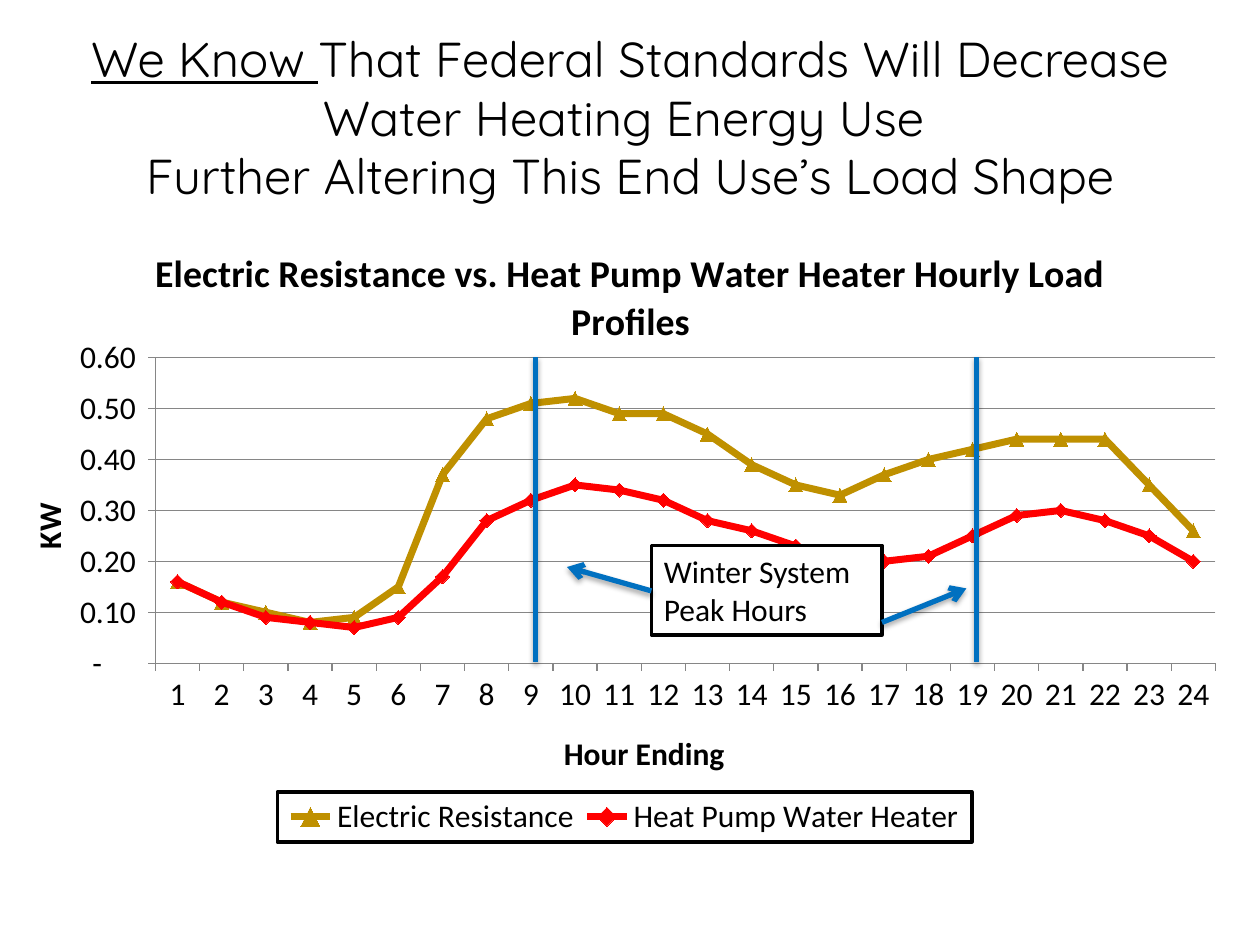
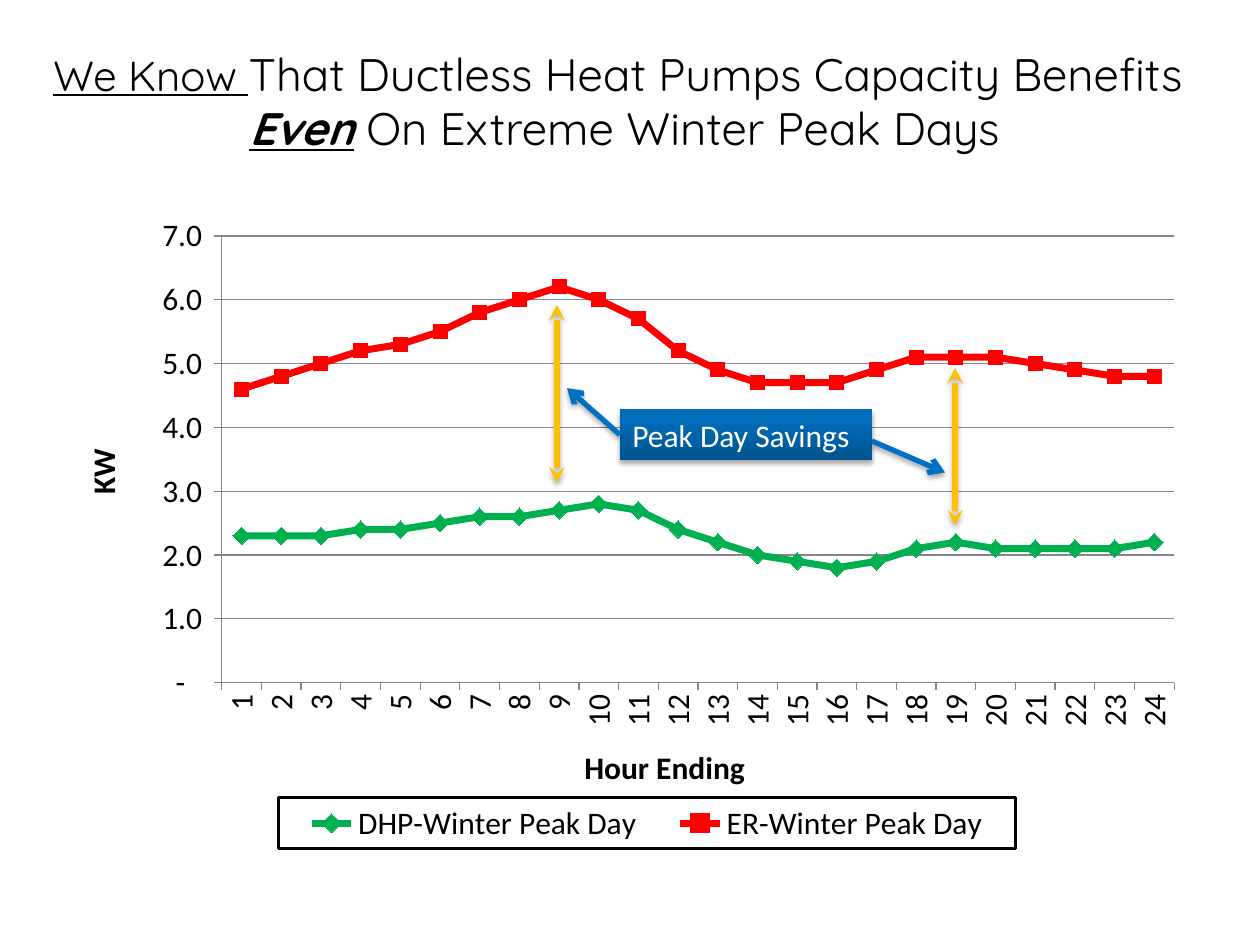
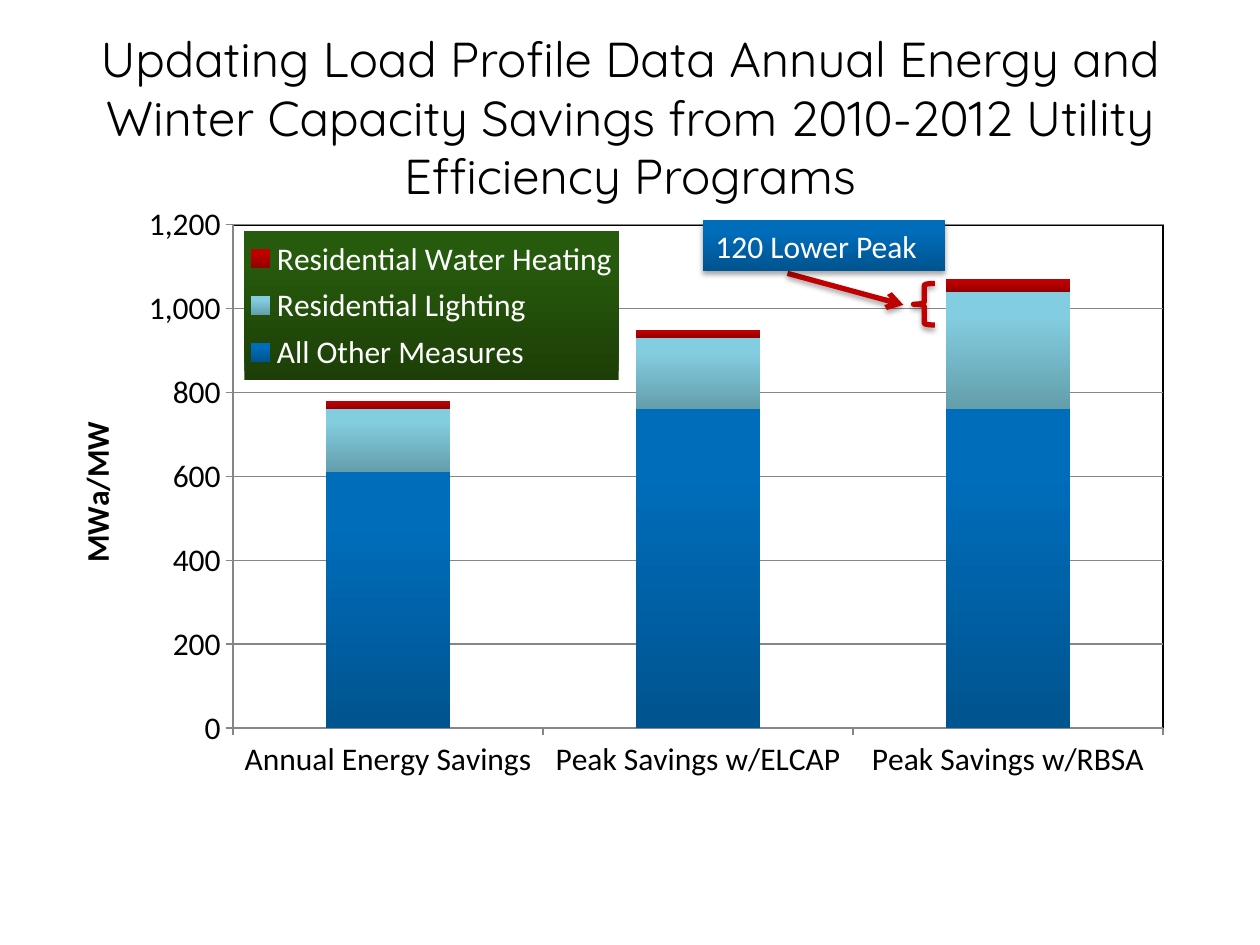
from pptx import Presentation
from pptx.chart.data import CategoryChartData
from pptx.dml.color import RGBColor
from pptx.enum.chart import XL_CHART_TYPE as ChartType
from pptx.enum.chart import XL_LEGEND_POSITION as LegendPosition
from pptx.enum.chart import XL_MARKER_STYLE as Marker
from pptx.enum.chart import XL_TICK_MARK as TickMark
from pptx.enum.shapes import MSO_CONNECTOR as Connector
from pptx.enum.shapes import MSO_SHAPE as Shape
from pptx.enum.text import MSO_ANCHOR as Anchor
from pptx.enum.text import MSO_AUTO_SIZE as AutoSize
from pptx.enum.text import PP_ALIGN as Align
from pptx.oxml import parse_xml
from pptx.oxml.ns import nsdecls, qn
from pptx.util import Inches, Pt

COLORS = {
    "black": "000000", "white": "FFFFFF", "grid": "868686",
    "blue": "0070C0", "gold": "BF9000", "yellow": "FFC000",
    "red": "FF0000", "dark_red": "C00000", "green": "00B050",
}
# Gradients run from the dark bottom to the bright top
GRADIENTS = {
    "blue": ("00548F", "006DBB"),
    "teal": ("639EAB", "83CDE0"),
    "red": ("900000", "BF0000"),
    "forest": ("1D3F07", "265A0C"),
}
TITLE_FONT, BODY_FONT, BODY_SIZE = "Quicksand", "Calibri", 18
HOURS = [str(hour) for hour in range(1, 25)]
TITLE_BOX = (0.5, 0.3, 9, 1.25)


def rgb(name):
    return RGBColor.from_string(COLORS[name])


def set_font(font, name, size, color):
    font.name, font.size, font.color.rgb = name, Pt(size), rgb(color)


def set_line(line, color, width):
    line.color.rgb = rgb(color)
    line.width = Pt(width)


def set_gradient(fill, name):
    fill.gradient()
    fill.gradient_angle = 90
    for stop, color, position in zip(fill.gradient_stops, GRADIENTS[name], (0, 0.8)):
        stop.color.rgb = RGBColor.from_string(color)
        stop.position = position


def add_shadow(shape):
    properties = shape._element.spPr
    for effects in properties.findall(qn("a:effectLst")):
        properties.remove(effects)
    properties.append(parse_xml(
        f'<a:effectLst {nsdecls("a")}><a:outerShdw blurRad="{Pt(3.1)}" '
        f'dist="{Pt(1.8)}" dir="5400000" rotWithShape="0">'
        f'<a:srgbClr val="{COLORS["black"]}"><a:alpha val="35000"/></a:srgbClr>'
        '</a:outerShdw></a:effectLst>'))


def place(box, offset):
    """Turn an offset inside a box into slide lengths."""
    return Inches(box[0] + offset[0]), Inches(box[1] + offset[1])


def add_title(slide, box, lines, size=28):
    """Each line is a list of (text, font attributes) pieces."""
    title = slide.shapes.title
    title.left, title.top, title.width, title.height = map(Inches, box)
    frame = title.text_frame
    frame.auto_size, frame.vertical_anchor = AutoSize.NONE, Anchor.MIDDLE
    paragraph = frame.paragraphs[0]
    paragraph.alignment = Align.CENTER
    set_font(paragraph.font, TITLE_FONT, size, "black")
    for number, pieces in enumerate(lines):
        if number:
            paragraph.add_line_break()
        for text, attributes in pieces:
            run = paragraph.add_run()
            run.text = text
            for attribute, value in attributes.items():
                setattr(run.font, attribute, value)


def add_rule(slide, box, start, end, color, head=None, tail=None):
    """Draw a shadowed line between two offsets in the box."""
    rule = slide.shapes.add_connector(
        Connector.STRAIGHT, *place(box, start), *place(box, end))
    set_line(rule.line, color, 3)
    outline = rule.line._get_or_add_ln()
    for tag, kind in (("headEnd", head), ("tailEnd", tail)):
        if kind:
            outline.append(parse_xml(f'<a:{tag} {nsdecls("a")} type="{kind}"/>'))
    add_shadow(rule)


def add_shape(slide, kind, box, offset, size):
    shape = slide.shapes.add_shape(kind, *place(box, offset), *map(Inches, size))
    shape.shadow.inherit = False
    return shape


def add_callout(slide, box, offset, size, text, filled=True):
    """Add a label, either blue or white with a black frame."""
    callout = add_shape(slide, Shape.RECTANGLE, box, offset, size)
    if filled:
        set_gradient(callout.fill, "blue")
        callout.line.fill.background()
        add_shadow(callout)
    else:
        callout.fill.solid()
        callout.fill.fore_color.rgb = rgb("white")
        set_line(callout.line, "black", 2)
    frame = callout.text_frame
    frame.word_wrap, frame.auto_size = True, AutoSize.SHAPE_TO_FIT_TEXT
    frame.vertical_anchor = Anchor.TOP
    paragraph = frame.paragraphs[0]
    paragraph.text, paragraph.alignment = text, Align.LEFT
    set_font(paragraph.font, BODY_FONT, BODY_SIZE, "white" if filled else "black")


def manual_layout(layout, inner=False):
    """Fractions of the chart: left, top, width, height."""
    target = '<c:layoutTarget val="inner"/>' if inner else ""
    modes = '<c:xMode val="edge"/><c:yMode val="edge"/>'
    sizes = "".join(f'<c:{tag} val="{value}"/>' for tag, value in zip("xywh", layout))
    return parse_xml(f'<c:layout {nsdecls("c")}><c:manualLayout>'
                     f'{target}{modes}{sizes}</c:manualLayout></c:layout>')


def set_heading(owner, text, size=BODY_SIZE):
    """Title a chart or an axis in bold."""
    title = owner.chart_title if hasattr(owner, "chart_title") else owner.axis_title
    paragraph = title.text_frame.paragraphs[0]
    paragraph.text = text
    set_font(paragraph.font, BODY_FONT, size, "black")
    paragraph.font.bold = True


def add_chart(slide, box, kind, categories, series, plot, maximum, step,
              number_format, value_title):
    """Add a chart with the shared axes, grid and fonts."""
    data = CategoryChartData()
    data.categories = categories
    for name, values in series:
        data.add_series(name, values)
    chart = slide.shapes.add_chart(kind, *map(Inches, box), data).chart
    set_font(chart.font, BODY_FONT, BODY_SIZE, "black")
    chart.has_title = False
    chart.plots[0].vary_by_categories = False
    plot_area = chart._chartSpace.chart.plotArea
    for layout in plot_area.findall(qn("c:layout")):
        plot_area.remove(layout)
    plot_area.insert(0, manual_layout(plot, inner=True))

    value_axis = chart.value_axis
    value_axis.minimum_scale, value_axis.maximum_scale = 0, maximum
    value_axis.major_unit = step
    value_axis.has_major_gridlines = True
    set_line(value_axis.major_gridlines.format.line, "grid", 0.75)
    labels = value_axis.tick_labels
    labels.number_format, labels.number_format_is_linked = number_format, False
    set_heading(value_axis, value_title)
    for axis in (value_axis, chart.category_axis):
        axis.major_tick_mark, axis.minor_tick_mark = TickMark.OUTSIDE, TickMark.NONE
        set_line(axis.format.line, "grid", 0.75)
    return chart


def add_legend(chart, position, layout, font_color):
    """Add a placed legend and return its shape properties."""
    chart.has_legend = True
    legend = chart.legend
    legend.position, legend.include_in_layout = position, False
    set_font(legend.font, BODY_FONT, BODY_SIZE, font_color)
    element = legend._element
    for old in element.findall(qn("c:layout")):
        element.remove(old)
    element.find(qn("c:legendPos")).addnext(manual_layout(layout))
    properties = parse_xml(f'<c:spPr {nsdecls("c", "a")}/>')
    element.find(qn("c:txPr")).addprevious(properties)
    return properties


def solid_line(color, width):
    return parse_xml(f'<a:ln {nsdecls("a")} w="{Pt(width)}"><a:solidFill>'
                     f'<a:srgbClr val="{COLORS[color]}"/></a:solidFill></a:ln>')


def add_hourly_chart(slide, box, series, legend_layout, **options):
    """Series hold name, values, color, marker style and marker size."""
    chart = add_chart(slide, box, ChartType.LINE_MARKERS, HOURS,
                      [entry[:2] for entry in series], value_title="KW", **options)
    set_heading(chart.category_axis, "Hour Ending")
    for line, (_, _, color, style, size) in zip(chart.plots[0].series, series):
        line.smooth = False
        set_line(line.format.line, color, 4)
        line.marker.style, line.marker.size = style, size
        line.marker.format.fill.solid()
        line.marker.format.fill.fore_color.rgb = rgb(color)
        set_line(line.marker.format.line, color, 0.75)
    properties = add_legend(chart, LegendPosition.BOTTOM, legend_layout, "black")
    properties.append(solid_line("black", 2))
    return chart


def build_water_heating(slide, box):
    add_title(slide, TITLE_BOX, [
        [("We Know ", {"underline": True}),
         ("That Federal Standards Will Decrease Water Heating Energy Use ", {})],
        [("Further Altering This End Use’s Load Shape", {})]])
    resistance = [0.16, 0.12, 0.1, 0.08, 0.09, 0.15, 0.37, 0.48, 0.51, 0.52, 0.49, 0.49,
                  0.45, 0.39, 0.35, 0.33, 0.37, 0.4, 0.42, 0.44, 0.44, 0.44, 0.35, 0.26]
    heat_pump = [0.16, 0.12, 0.09, 0.08, 0.07, 0.09, 0.17, 0.28, 0.32, 0.35, 0.34, 0.32,
                 0.28, 0.26, 0.23, 0.2, 0.2, 0.21, 0.25, 0.29, 0.3, 0.28, 0.25, 0.2]
    chart = add_hourly_chart(
        slide, box,
        [("Electric Resistance", resistance, "gold", Marker.TRIANGLE, 8),
         ("Heat Pump Water Heater", heat_pump, "red", Marker.DIAMOND, 8)],
        legend_layout=(0.21, 0.92, 0.57, 0.08), plot=(0.11, 0.22, 0.87, 0.49),
        maximum=0.6, step=0.1,
        number_format='_(* #,##0.00_);_(* \\(#,##0.00\\);_(* "-"??_);_(@_)')
    chart.has_title = True
    set_heading(chart, "Electric Resistance vs. Heat Pump Water Heater "
                       "Hourly Load Profiles", 21.6)
    # Winter peak hours
    add_rule(slide, box, (4.08, 3.5), (4.08, 1.08), "blue")
    add_callout(slide, box, (5, 2.58), (1.83, 0.71), "Winter System Peak Hours",
                filled=False)
    add_rule(slide, box, (7.58, 3.5), (7.58, 1.08), "blue")
    add_rule(slide, box, (6.83, 3.19), (7.5, 2.92), "blue", tail="arrow")
    add_rule(slide, box, (5, 2.94), (4.33, 2.75), "blue", tail="arrow")


def build_ductless(slide, box):
    add_title(slide, (0.17, 0.17, 9.58, 1.25), [
        [("We Know ", {"underline": True, "size": Pt(24)}),
         ("That Ductless Heat Pumps Capacity Benefits ", {})],
        [("Even", {"bold": True, "italic": True, "underline": True}),
         (" On Extreme Winter Peak Days", {})]], size=26)
    ductless = [2.3, 2.3, 2.3, 2.4, 2.4, 2.5, 2.6, 2.6, 2.7, 2.8, 2.7, 2.4,
                2.2, 2, 1.9, 1.8, 1.9, 2.1, 2.2, 2.1, 2.1, 2.1, 2.1, 2.2]
    resistance = [4.6, 4.8, 5, 5.2, 5.3, 5.5, 5.8, 6, 6.2, 6, 5.7, 5.2,
                  4.9, 4.7, 4.7, 4.7, 4.9, 5.1, 5.1, 5.1, 5, 4.9, 4.8, 4.8]
    chart = add_hourly_chart(
        slide, box,
        [("DHP-Winter Peak Day", ductless, "green", Marker.DIAMOND, 10),
         ("ER-Winter Peak Day", resistance, "red", Marker.SQUARE, 8)],
        legend_layout=(0.19, 0.92, 0.65, 0.08), plot=(0.14, 0.04, 0.84, 0.7),
        maximum=7, step=1,
        number_format='_(* #,##0.0_);_(* \\(#,##0.0\\);_(* "-"?_);_(@_)')
    # Upright hour labels
    set_font(chart.category_axis.tick_labels.font, BODY_FONT, BODY_SIZE, "black")
    label_text = chart.category_axis._element.find(qn("c:txPr"))
    label_text.find(qn("a:bodyPr")).set("rot", "-5400000")
    # Savings at the two peaks
    for x, bottom, top in ((3.92, 2.16, 0.75), (7.08, 2.5, 1.25)):
        add_rule(slide, box, (x, bottom), (x, top), "yellow", "stealth", "stealth")
    add_callout(slide, box, (4.42, 1.58), (2, 0.4), "Peak Day Savings")
    add_rule(slide, box, (6.42, 1.83), (7, 2.08), "blue", tail="arrow")
    add_rule(slide, box, (4.42, 1.78), (4, 1.41), "blue", tail="arrow")


def build_savings(slide, box):
    add_title(slide, TITLE_BOX, [[(
        "Updating Load Profile Data Annual Energy and Winter Capacity Savings "
        "from 2010-2012 Utility Efficiency Programs", {})]])
    chart = add_chart(
        slide, box, ChartType.COLUMN_STACKED,
        ["Annual Energy Savings", "Peak Savings w/ELCAP", "Peak Savings w/RBSA"],
        [("All Other Measures", (610, 760, 760)),
         ("Residential Lighting", (150, 170, 280)),
         ("Residential Water Heating", (20, 20, 30))],
        plot=(0.15, 0.04, 0.82, 0.78), maximum=1200, step=200,
        number_format="#,##0", value_title="MWa/MW")
    plot = chart.plots[0]
    plot.gap_width, plot.overlap = 150, 100
    for series, gradient in zip(plot.series, ("blue", "teal", "red")):
        set_gradient(series.format.fill, gradient)
    # Plot frame
    frame = parse_xml(f'<c:spPr {nsdecls("c", "a")}><a:noFill/></c:spPr>')
    frame.append(solid_line("black", 0.75))
    chart._chartSpace.chart.plotArea.append(frame)
    # Green legend
    properties = add_legend(chart, LegendPosition.RIGHT, (0.16, 0.05, 0.33, 0.23), "white")
    low, high = GRADIENTS["forest"]
    properties.append(parse_xml(
        f'<a:gradFill {nsdecls("a")}><a:gsLst>'
        f'<a:gs pos="0"><a:srgbClr val="{low}"/></a:gs>'
        f'<a:gs pos="80000"><a:srgbClr val="{high}"/></a:gs>'
        '</a:gsLst><a:lin ang="16200000" scaled="0"/></a:gradFill>'))
    # Peak difference
    add_rule(slide, box, (5.75, 0.59), (6.67, 0.84), "dark_red", tail="arrow")
    brace = add_shape(slide, Shape.LEFT_BRACE, box, (6.75, 0.67), (0.17, 0.33))
    brace.fill.background()
    set_line(brace.line, "dark_red", 3)
    add_shadow(brace)
    add_callout(slide, box, (5.08, 0.17), (1.92, 0.4), "120 Lower Peak")


def main():
    presentation = Presentation()
    presentation.slide_width, presentation.slide_height = Inches(10), Inches(7.5)
    title_only = presentation.slide_layouts[5]
    for build, box in ((build_water_heating, (0.17, 1.75, 9.67, 4.95)),
                       (build_ductless, (0.5, 1.67, 9, 5.08)),
                       (build_savings, (0.5, 1.58, 9, 5.12))):
        build(presentation.slides.add_slide(title_only), box)
    presentation.save("out.pptx")


if __name__ == "__main__":
    main()
